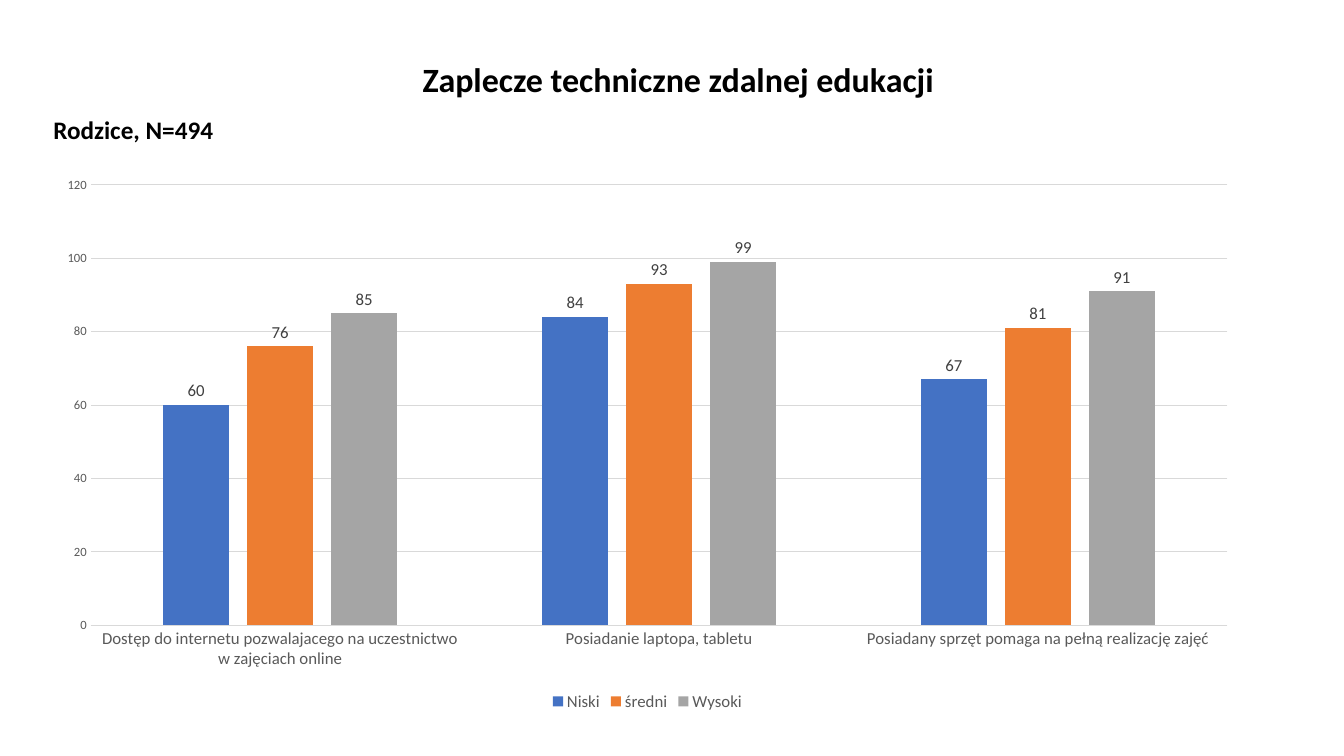
from pptx import Presentation
from pptx.chart.data import CategoryChartData
from pptx.dml.color import RGBColor
from pptx.enum import chart as ch, text
from pptx.util import Pt

BLACK = RGBColor(0x00, 0x00, 0x00)
AXIS_GREY = RGBColor(0x59, 0x59, 0x59)
LABEL_GREY = RGBColor(0x40, 0x40, 0x40)
GRID_GREY = RGBColor(0xD9, 0xD9, 0xD9)
BLUE = RGBColor(0x44, 0x72, 0xC4)
ORANGE = RGBColor(0xED, 0x7D, 0x31)
SILVER = RGBColor(0xA5, 0xA5, 0xA5)

CATEGORIES = [
    "Dostęp do internetu pozwalajacego na uczestnictwo w zajęciach online",
    "Posiadanie laptopa, tabletu",
    "Posiadany sprzęt pomaga na pełną realizację zajęć",
]
LEVELS = [
    ("Niski", (60, 84, 67), BLUE),
    ("średni", (76, 93, 81), ORANGE),
    ("Wysoki", (85, 99, 91), SILVER),
]


class SlideBuilder:
    def __init__(self, prs, font="Calibri"):
        self.s = prs.slides.add_slide(prs.slide_layouts[6])
        self.font = font

    def style(self, font, size, color, bold=False):
        font.name = self.font
        font.size = Pt(size)
        font.color.rgb = color
        font.bold = bold

    def line(self, fmt, color):
        fmt.line.color.rgb = color
        fmt.line.width = Pt(0.75)

    def text(self, box, runs, align=text.PP_ALIGN.LEFT,
             anchor=text.MSO_ANCHOR.TOP, spacing=1.0):
        sp = self.s.shapes.add_textbox(*map(Pt, box))
        tf = sp.text_frame
        tf.word_wrap = True
        tf.vertical_anchor = anchor
        p = tf.paragraphs[0]
        p.alignment = align
        p.line_spacing = spacing
        for content, size in runs:
            r = p.add_run()
            r.text = content
            self.style(r.font, size, BLACK, bold=True)

    def columns(self, box, categories, levels):
        data = CategoryChartData()
        data.categories = categories
        for name, values, _ in levels:
            data.add_series(name, values)
        chart = self.s.shapes.add_chart(
            ch.XL_CHART_TYPE.COLUMN_CLUSTERED, *map(Pt, box), data).chart
        self.style(chart.font, 10, BLACK)
        chart.has_title = False
        chart.has_legend = True
        chart.legend.position = ch.XL_LEGEND_POSITION.BOTTOM
        chart.legend.include_in_layout = False
        self.style(chart.legend.font, 12, AXIS_GREY)

        for axis, size in ((chart.category_axis, 12), (chart.value_axis, 9)):
            axis.major_tick_mark = ch.XL_TICK_MARK.NONE
            axis.minor_tick_mark = ch.XL_TICK_MARK.NONE
            self.style(axis.tick_labels.font, size, AXIS_GREY)
        self.line(chart.category_axis.format, GRID_GREY)
        value_axis = chart.value_axis
        value_axis.minimum_scale = 0
        value_axis.maximum_scale = 120
        value_axis.major_unit = 20
        value_axis.format.line.fill.background()
        self.line(value_axis.major_gridlines.format, GRID_GREY)

        plot = chart.plots[0]
        plot.vary_by_categories = False
        plot.gap_width = 219
        plot.overlap = -27
        for series, (_, _, color) in zip(plot.series, levels):
            series.format.fill.solid()
            series.format.fill.fore_color.rgb = color
            labels = series.data_labels
            labels.show_value = True
            labels.position = ch.XL_LABEL_POSITION.OUTSIDE_END
            self.style(labels.font, 12, LABEL_GREY)


def main():
    prs = Presentation()
    prs.slide_width, prs.slide_height = Pt(960), Pt(540)
    slide = SlideBuilder(prs)
    slide.text((66, 29, 828, 49),
               [(" ", 39.6), ("Zaplecze techniczne zdalnej edukacji", 24.3)],
               text.PP_ALIGN.CENTER, text.MSO_ANCHOR.MIDDLE, 0.9)
    slide.columns((31, 119, 863, 392), CATEGORIES, LEVELS)
    slide.text((31, 78, 706, 29), [("Rodzice, N=494", 18)])
    prs.save("out.pptx")


if __name__ == "__main__":
    main()
